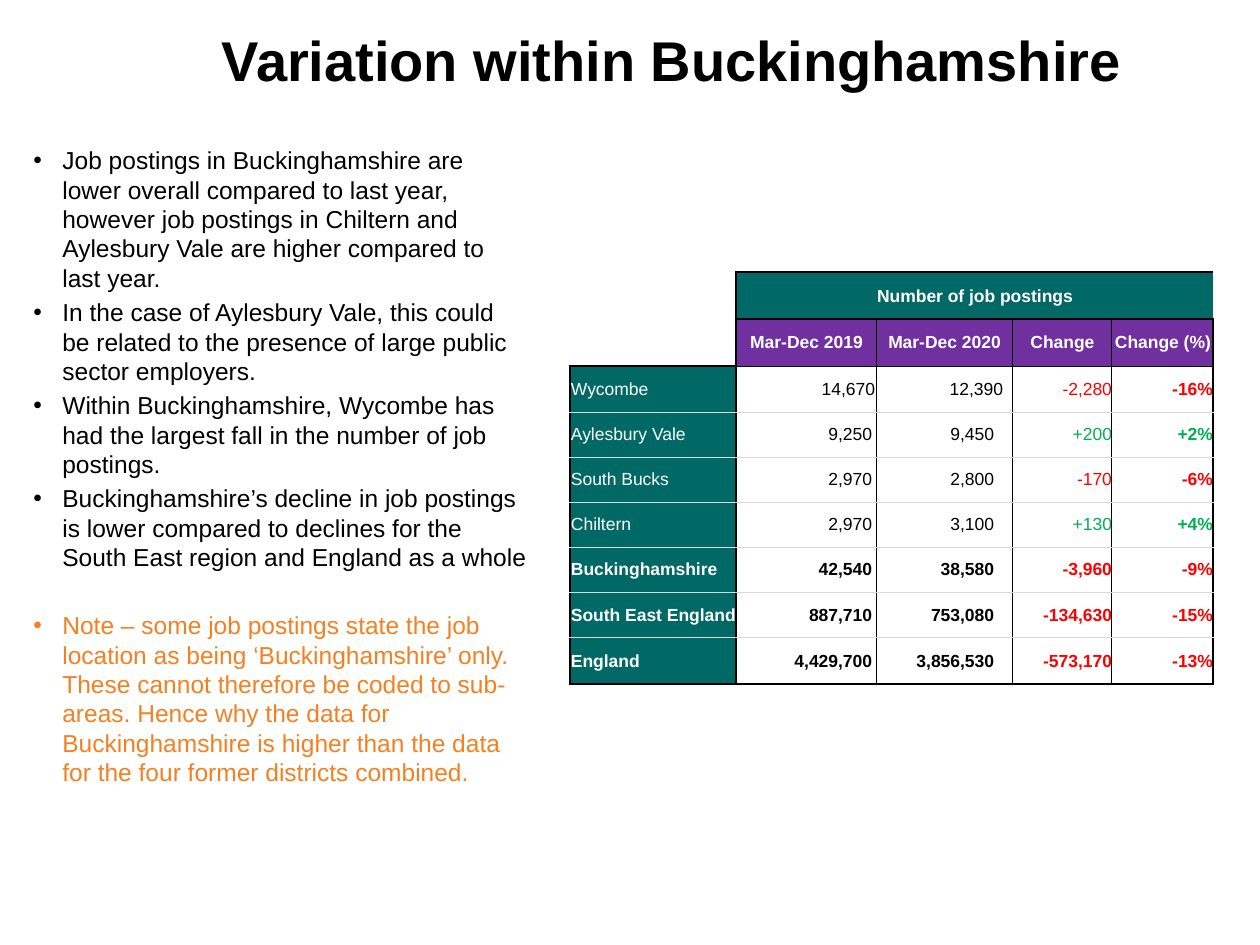
from lxml.etree import SubElement
from pptx import Presentation
from pptx.dml.color import RGBColor
from pptx.enum.text import MSO_ANCHOR as ANCHOR, PP_ALIGN as ALIGN
from pptx.oxml.ns import qn
from pptx.util import Pt

SCALE = 914400 / 126
C = {"black": "000000", "white": "FFFFFF", "orange": "F58021", "teal": "006965",
     "purple": "7030A0", "red": "FF0000", "green": "00B050", "rule": "D9D9D9"}
BULLETS = [
    ("Job postings in Buckinghamshire are lower overall compared to last year, however job "
     "postings in Chiltern and Aylesbury Vale are higher compared to last year.", "black", 0),
    ("In the case of Aylesbury Vale, this could be related to the presence of large public "
     "sector employers.", "black", 2.8),
    ("Within Buckinghamshire, Wycombe has had the largest fall in the number of job "
     "postings.", "black", 2.8),
    ("Buckinghamshire’s decline in job postings is lower compared to declines for the "
     "South East region and England as a whole", "black", 2.8),
    ("Note – some job postings state the job location as being ‘Buckinghamshire’ only. "
     "These cannot therefore be coded to sub-areas. Hence why the data for Buckinghamshire "
     "is higher than the data for the four former districts combined.", "orange", 22),
]
HEADS = ["Mar-Dec 2019", "Mar-Dec 2020", "Change", "Change (%)"]
AREAS = [
    ("Wycombe", "14,670", "12,390", "-2,280", "-16%"),
    ("Aylesbury Vale", "9,250", "9,450", "+200", "+2%"),
    ("South Bucks", "2,970", "2,800", "-170", "-6%"),
    ("Chiltern", "2,970", "3,100", "+130", "+4%"),
    ("Buckinghamshire", "42,540", "38,580", "-3,960", "-9%"),
    ("South East England", "887,710", "753,080", "-134,630", "-15%"),
    ("England", "4,429,700", "3,856,530", "-573,170", "-13%"),
]
COLS = [166, 140, 136, 100, 101]
ROWS = [47, 47, 46, 45, 45, 45, 45, 46, 46]
FIRST_TOTAL = 4


def px(n):
    """Turn px into EMU."""
    return round(n * SCALE)


def add_run(p, text, size, color, bold=False):
    """Add one styled run to a paragraph."""
    r = p.add_run()
    r.text = text
    r.font.name = "Arial"
    r.font.size = Pt(size)
    r.font.bold = bold
    r.font.color.rgb = RGBColor.from_string(C[color])


def add_frame(s, box):
    """Add a wrapping text box and return its text frame."""
    tf = s.shapes.add_textbox(*map(px, box)).text_frame
    tf.word_wrap = True
    return tf


def add_title(s, box):
    """Place the centred slide title."""
    tf = add_frame(s, box)
    tf.vertical_anchor = ANCHOR.MIDDLE
    p = tf.paragraphs[0]
    p.alignment = ALIGN.CENTER
    add_run(p, "Variation within Buckinghamshire", 32, "black", True)


def add_bullets(s, box):
    """Place the bulleted commentary."""
    tf = add_frame(s, box)
    for i, (text, color, gap) in enumerate(BULLETS):
        p = tf.paragraphs[0] if i == 0 else tf.add_paragraph()
        pPr = p._p.get_or_add_pPr()
        pPr.set("marL", str(px(29)))
        pPr.set("indent", str(px(-29)))
        SubElement(pPr, qn("a:buFont"), typeface="Arial")
        SubElement(pPr, qn("a:buChar"), char="•")
        p.space_before = Pt(gap)
        add_run(p, text, 14, color)


def side_rule(row, edge):
    """Return colour and width of a vertical rule, or None."""
    if edge == 0:
        return ("black", 1) if row > 1 else None
    if edge in (1, len(COLS)):
        return "black", 1
    return ("black", 0.5) if row else None


def level_rule(edge, col):
    """Return colour and width of a horizontal rule, or None."""
    if col == 0 and edge < 2:
        return None
    if edge in (0, 1, len(ROWS)) or (edge == 2 and col == 0):
        return "black", 1
    return ("black" if edge == 2 else "rule"), 0.5


def add_borders(cell, row, col):
    """Draw the four borders of a cell."""
    rules = {"L": side_rule(row, col), "R": side_rule(row, col + 1),
             "T": level_rule(row, col), "B": level_rule(row + 1, col)}
    tcPr = cell._tc.get_or_add_tcPr()
    for side, rule in rules.items():
        ln = SubElement(tcPr, qn(f"a:ln{side}"))
        if rule is None:
            SubElement(ln, qn("a:noFill"))
            continue
        ln.set("w", str(Pt(rule[1])))
        fill = SubElement(ln, qn("a:solidFill"))
        SubElement(fill, qn("a:srgbClr"), val=C[rule[0]])


def cell_look(row, col, text):
    """Return fill, text colour, boldness and alignment of a cell."""
    total = row - 2 >= FIRST_TOTAL
    if row < 2:
        fill = None if col == 0 else ("teal", "purple")[row]
        return fill, "white", True, ALIGN.CENTER
    if col == 0:
        return "teal", "white", total, ALIGN.LEFT
    if col < 3:
        return None, "black", total, ALIGN.RIGHT
    return None, "green" if text[0] == "+" else "red", total or col == 4, ALIGN.RIGHT


def right_inset(row, col):
    """Return the right cell margin in px."""
    if row < 2 or col not in (1, 2):
        return 0
    return {1: 4, 2: 18}[col] if row > 2 else {1: 1, 2: 9}[col]


def add_postings(s, box):
    """Place the table of job postings."""
    tb = s.shapes.add_table(len(ROWS), len(COLS), *map(px, box)).table
    tb.first_row = tb.horz_banding = False
    for col, width in zip(tb.columns, COLS):
        col.width = px(width)
    for row, height in zip(tb.rows, ROWS):
        row.height = px(height)
    tb.cell(0, 1).merge(tb.cell(0, 4))
    grid = [["", "Number of job postings", "", "", ""], ["", *HEADS], *AREAS]
    for i, line in enumerate(grid):
        for j, text in enumerate(line):
            cell = tb.cell(i, j)
            fill, color, bold, align = cell_look(i, j, text)
            cell.margin_left = cell.margin_top = px(1)
            cell.margin_right, cell.margin_bottom = px(right_inset(i, j)), 0
            cell.vertical_anchor = ANCHOR.MIDDLE
            add_borders(cell, i, j)
            if fill:
                cell.fill.solid()
                cell.fill.fore_color.rgb = RGBColor.from_string(C[fill])
            else:
                cell.fill.background()
            if text:
                p = cell.text_frame.paragraphs[0]
                p.alignment = align
                add_run(p, text, 10, color, bold)


def main():
    """Build the slide and save it."""
    prs = Presentation()
    prs.slide_width, prs.slide_height = px(1260), px(945)
    s = prs.slides.add_slide(prs.slide_layouts[6])
    add_title(s, (105, -19, 1134, 157))
    add_bullets(s, (21, 139, 519, 708))
    add_postings(s, (570, 272, sum(COLS), sum(ROWS)))
    prs.save("out.pptx")


if __name__ == "__main__":
    main()
